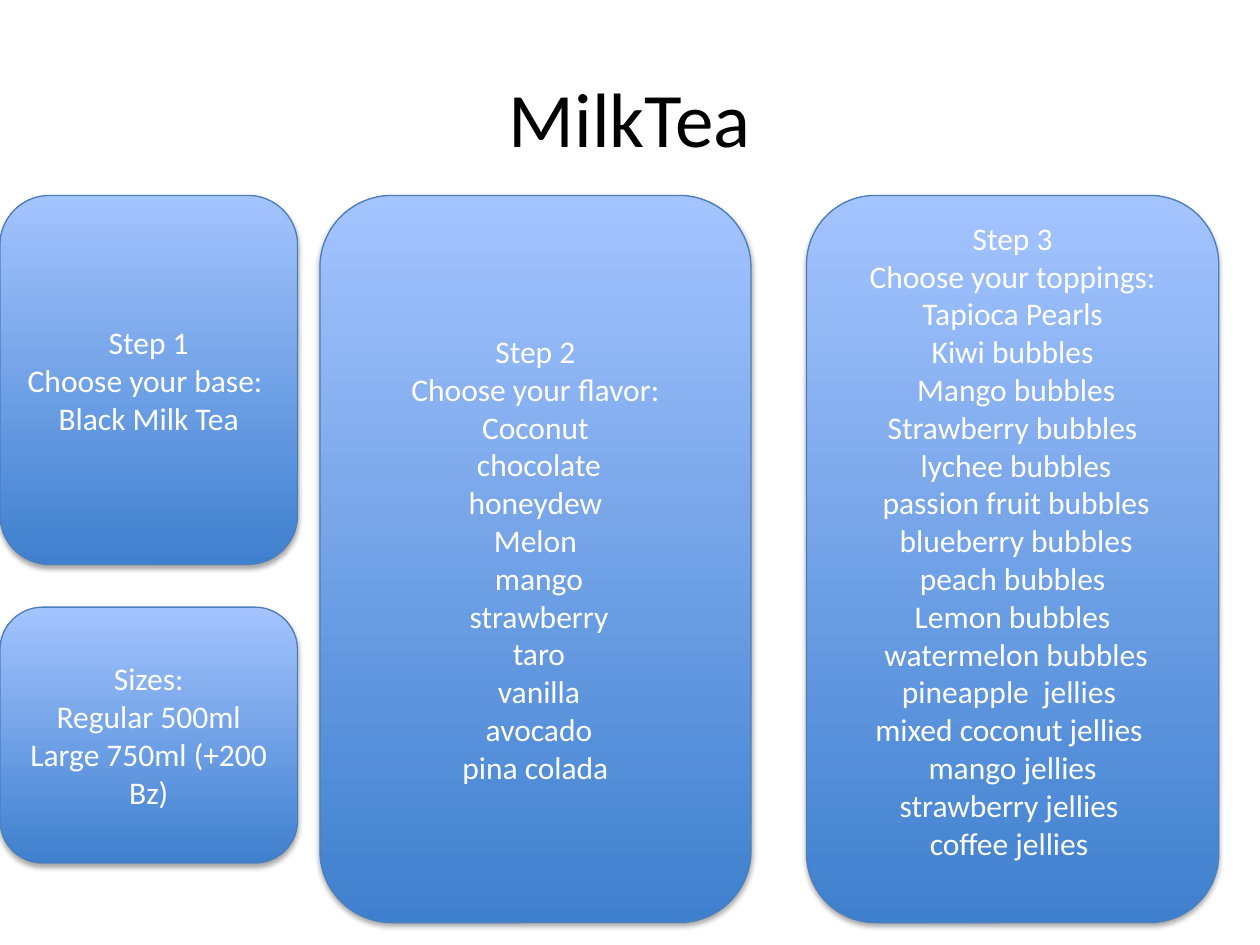
from lxml import etree
from pptx import Presentation
from pptx.dml.color import RGBColor
from pptx.enum.shapes import MSO_SHAPE
from pptx.enum.text import MSO_ANCHOR, PP_ALIGN
from pptx.oxml.ns import qn
from pptx.util import Cm, Pt

ROUNDED = MSO_SHAPE.ROUNDED_RECTANGLE
MIDDLE = MSO_ANCHOR.MIDDLE
CENTER = PP_ALIGN.CENTER


def color(hex_string):
    return RGBColor.from_string(hex_string)


def write_lines(shape, lines, size, hex_string):
    frame = shape.text_frame
    frame.word_wrap = True
    frame.vertical_anchor = MIDDLE
    frame.text = "\n".join(lines)
    for para in frame.paragraphs:
        para.alignment = CENTER
        for span in para.runs:
            span.font.name = "Calibri"
            span.font.size = Pt(size)
            span.font.color.rgb = color(hex_string)


deck = Presentation()
deck.slide_width = Cm(25.4)
deck.slide_height = Cm(19.05)
page = deck.slides.add_slide(deck.slide_layouts[6])

title = page.shapes.add_textbox(Cm(1.27), Cm(0.76), Cm(22.86), Cm(3.18))
write_lines(title, ["MilkTea"], 44, "000000")

top = 3.94
left_width = 6
tall_height = 14.66
default_inset = 0.13
blank_line = 0.76

base = ["Step 1", "Choose your base: ", "Black Milk Tea"]
flavors = [
    "Step 2", "Choose your flavor:", "Coconut", " chocolate", " honeydew ",
    "Melon", " mango", " strawberry", " taro", " vanilla", " avocado",
    " pina colada ",
]
toppings = [
    "Step 3", "Choose your toppings:", "Tapioca Pearls", "Kiwi bubbles",
    " Mango bubbles", "Strawberry bubbles", " lychee bubbles",
    " passion fruit bubbles", " blueberry bubbles", "peach bubbles",
    "Lemon bubbles", " watermelon bubbles", "pineapple  jellies ",
    "mixed coconut jellies ", " mango jellies ", "strawberry jellies ",
    "coffee jellies ",
]
sizes = ["Sizes:", "Regular 500ml", "Large 750ml (+200 Bz)"]

cards = [
    (0, top, left_width, 7.44, default_inset, base),
    (6.45, top, 8.69, tall_height, default_inset, flavors),
    (16.26, top, 8.31, tall_height, default_inset + blank_line, toppings),
    (0, 12.24, left_width, 5.16, default_inset, sizes),
]

for left, card_top, width, height, bottom_inset, lines in cards:
    card = page.shapes.add_shape(
        ROUNDED, Cm(left), Cm(card_top), Cm(width), Cm(height)
    )
    card.fill.gradient()
    card.fill.gradient_angle = 90
    for stop, hex_string in zip(card.fill.gradient_stops, ("3F80CE", "A4C4FF")):
        stop.color.rgb = color(hex_string)
    card.line.color.rgb = color("4B7EBC")
    card.line.width = Pt(0.75)

    card.shadow.inherit = False
    effects = card._element.spPr.find(qn("a:effectLst"))
    shadow = etree.SubElement(
        effects, qn("a:outerShdw"), blurRad=str(Pt(3.1)), dist=str(Pt(1.8)),
        dir="5400000", rotWithShape="0",
    )
    shade = etree.SubElement(shadow, qn("a:srgbClr"), val="000000")
    etree.SubElement(shade, qn("a:alpha"), val="35000")

    write_lines(card, lines, 18, "FFFFFF")
    card.text_frame.margin_bottom = Cm(bottom_inset)

deck.save("out.pptx")
